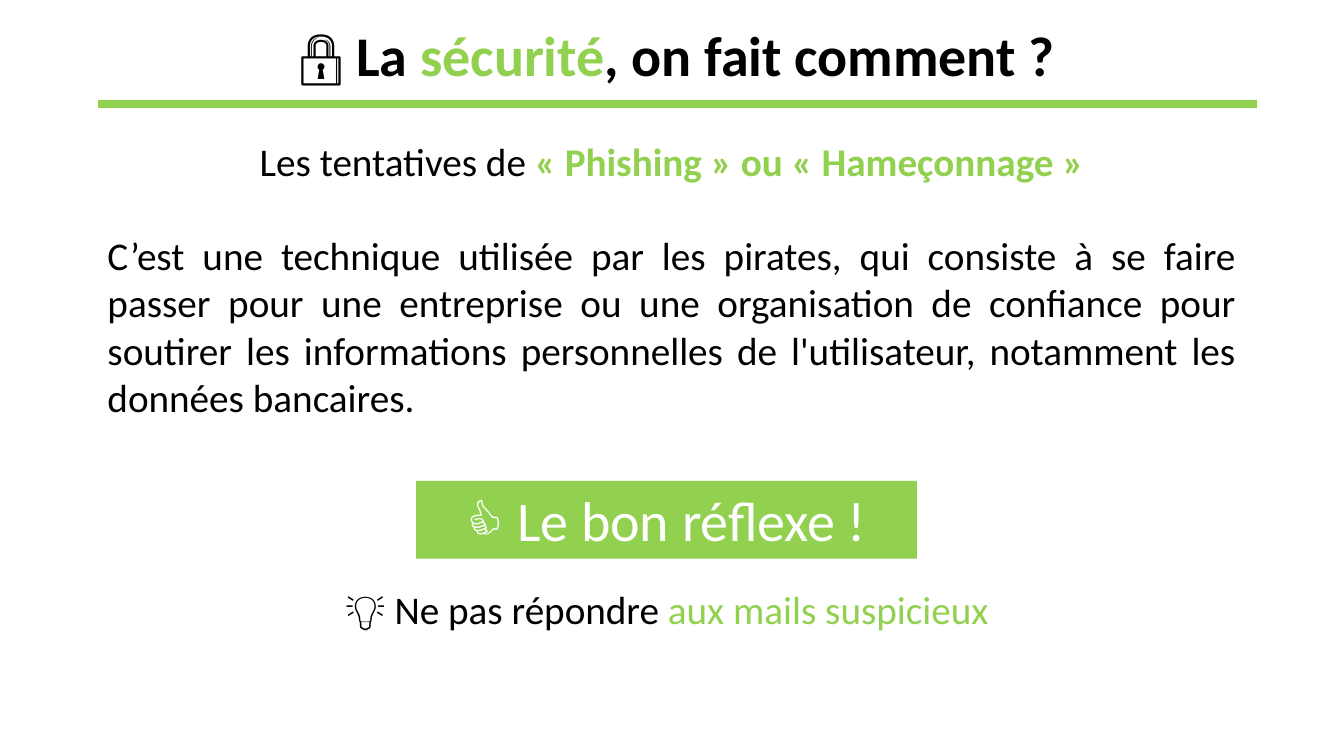
from pptx import Presentation
from pptx.dml.color import RGBColor
from pptx.enum.shapes import MSO_CONNECTOR as Connector, MSO_SHAPE as Shape
from pptx.enum.text import MSO_ANCHOR as Anchor, PP_ALIGN as Align
from pptx.oxml.ns import qn
from pptx.util import Cm, Pt
from lxml.etree import SubElement

GREEN = RGBColor(0x92, 0xD0, 0x50)
BLACK = RGBColor(0, 0, 0)
WHITE = RGBColor(0xFF, 0xFF, 0xFF)
FONT = "Calibri"
TITLE_SIZE, BODY_SIZE = Pt(40), Pt(28)


def write(para, spans, size, align=Align.CENTER, bold=False):
    """Fill a paragraph with (text, colour) or (text, colour, bold) spans."""
    para.alignment = align
    para.font.name, para.font.size, para.font.bold = FONT, size, bold
    for text, colour, *strong in spans:
        span = para.add_run()
        span.text = text
        span.font.color.rgb = colour
        if strong:
            span.font.bold = strong[0]


def add_text_frame(page, box):
    frame = page.shapes.add_textbox(*box).text_frame
    frame.word_wrap = True
    return frame


def add_title(page, box):
    left, top, width, height = box
    # Rule under the title
    rule_y = top + Cm(2.98)
    rule = page.shapes.add_connector(
        Connector.STRAIGHT, left, rule_y, left + width, rule_y)
    rule.line.color.rgb = GREEN
    rule.line.width = Pt(6)
    SubElement(rule._element.spPr, qn("a:effectLst"))
    # Title text
    frame = add_text_frame(page, box)
    frame.vertical_anchor = Anchor.MIDDLE
    para = frame.paragraphs[0]
    para.line_spacing = 0.9
    write(para, [("🔒 La ", BLACK), ("sécurité", GREEN),
                 (", on fait comment ?", BLACK)], TITLE_SIZE, bold=True)


def add_definition(page, box):
    frame = add_text_frame(page, box)
    write(frame.paragraphs[0],
          [("Les tentatives de ", BLACK),
           ("« Phishing » ou « Hameçonnage »", GREEN, True)], BODY_SIZE)
    para = frame.add_paragraph()
    para.space_before = Pt(34)
    write(para, [(
        "C’est une technique utilisée par les pirates, qui consiste à se faire "
        "passer pour une entreprise ou une organisation de confiance pour "
        "soutirer les informations personnelles de l'utilisateur, notamment "
        "les données bancaires.", BLACK)], BODY_SIZE, Align.JUSTIFY)


def add_banner(page, box):
    banner = page.shapes.add_shape(Shape.RECTANGLE, *box)
    banner.shadow.inherit = False
    banner.fill.solid()
    banner.fill.fore_color.rgb = GREEN
    banner.line.fill.background()
    frame = banner.text_frame
    frame.word_wrap = True
    frame.vertical_anchor = Anchor.TOP
    write(frame.paragraphs[0], [("👍 Le bon réflexe !", WHITE)], TITLE_SIZE)


def add_advice(page, box):
    frame = add_text_frame(page, box)
    write(frame.paragraphs[0],
          [("💡 Ne pas répondre ", BLACK), ("aux mails suspicieux", GREEN)],
          BODY_SIZE)


def main():
    deck = Presentation()
    deck.slide_width, deck.slide_height = Cm(33.87), Cm(19.05)
    page = deck.slides.add_slide(deck.slide_layouts[6])
    add_title(page, (Cm(2.46), Cm(-0.36), Cm(29.21), Cm(3.68)))
    add_definition(page, (Cm(2.46), Cm(3.33), Cm(28.93), Cm(7.44)))
    add_advice(page, (Cm(2.34), Cm(14.63), Cm(28.93), Cm(2.64)))
    add_banner(page, (Cm(10.49), Cm(12.12), Cm(12.62), Cm(1.96)))
    deck.save("out.pptx")


if __name__ == "__main__":
    main()
